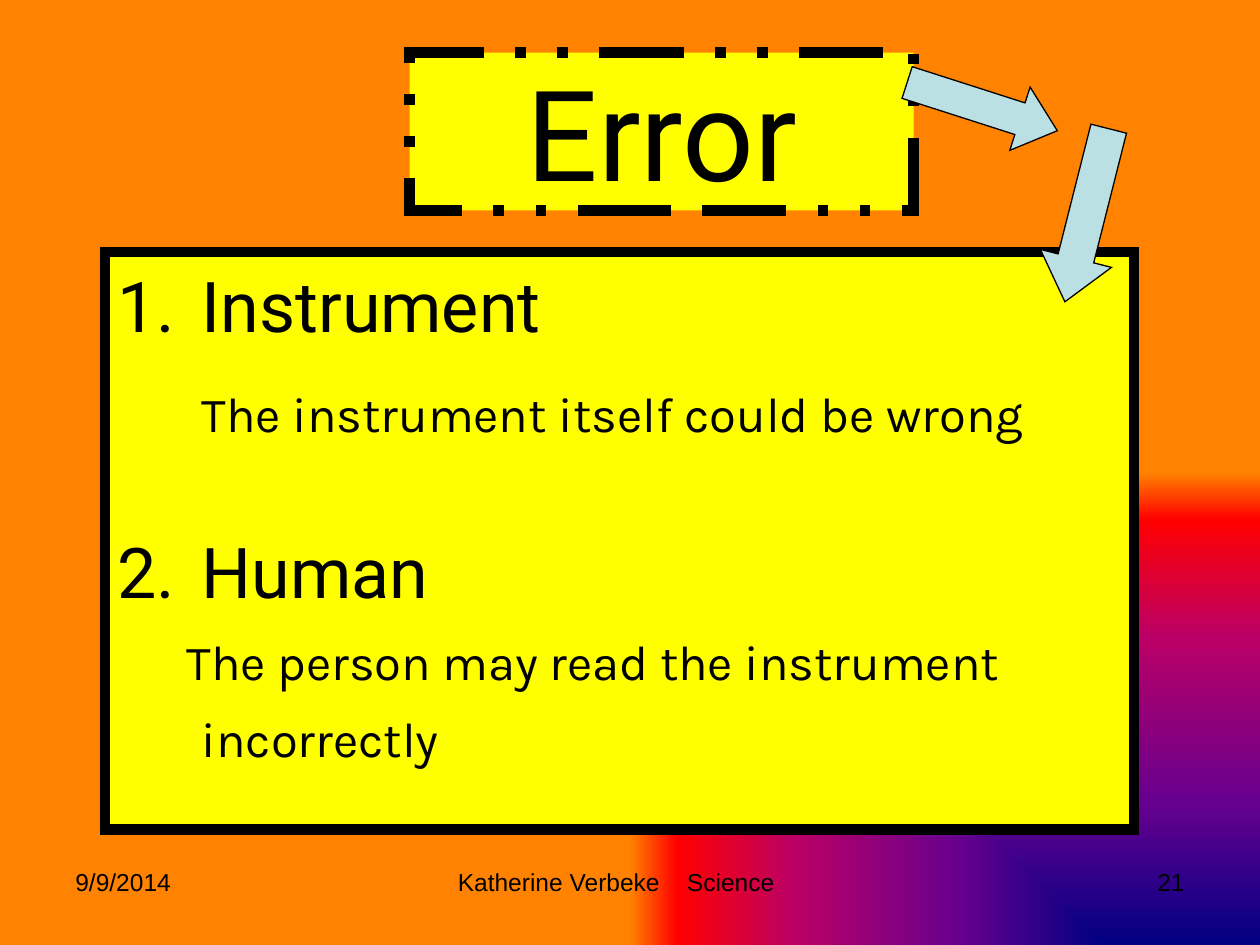
from pptx import Presentation
from pptx.dml.color import RGBColor
from pptx.enum.dml import MSO_LINE
from pptx.enum.shapes import MSO_SHAPE
from pptx.enum.text import MSO_ANCHOR, MSO_AUTO_SIZE, PP_ALIGN
from pptx.oxml import parse_xml
from pptx.oxml.ns import nsdecls, qn
from pptx.util import Cm, Pt
from lxml.etree import SubElement

COLORS = {"ink": "000000", "panel": "FFFF00", "arrow": "BBE0E3"}
BACKGROUND = {0: "000082", 30: "66008F", 65: "BA0066", 90: "FF0000", 100: "FF8200"}
HEADING, DETAIL, FOOTER = ("Roboto", 40), ("Karla", 28), ("Arial", 14)


class SlideBuilder:
    def __init__(self, slide):
        self.slide = slide

    def background(self, stops):
        marks = "".join(
            f'<a:gs pos="{position * 1000}"><a:srgbClr val="{color}"/></a:gs>'
            for position, color in stops.items())
        self.slide.element.cSld.insert(0, parse_xml(
            f'<p:bg {nsdecls("p", "a")}><p:bgPr><a:gradFill rotWithShape="0">'
            f'<a:gsLst>{marks}</a:gsLst><a:path path="rect">'
            '<a:fillToRect l="100000" t="100000"/></a:path></a:gradFill>'
            '<a:effectLst/></p:bgPr></p:bg>'))

    def outline(self, shape, fill, width, dash=None):
        shape.fill.solid()
        shape.fill.fore_color.rgb = RGBColor.from_string(COLORS[fill])
        shape.line.color.rgb = RGBColor.from_string(COLORS["ink"])
        shape.line.width = Pt(width)
        if dash:
            shape.line.dash_style = dash
        line = shape.element.spPr.find(qn("a:ln"))
        SubElement(line, qn("a:miter"), lim="800000")

    def format(self, para, style, align=PP_ALIGN.LEFT):
        para.alignment = align
        for span in para.runs:
            span.font.name, size = style
            span.font.size = Pt(size)
            span.font.color.rgb = RGBColor.from_string(COLORS["ink"])

    def title(self, text, left, top, width, height):
        box = self.slide.shapes.title
        box.left, box.top, box.width, box.height = map(Cm, (left, top, width, height))
        self.outline(box, "panel", 6, MSO_LINE.DASH_DOT_DOT)
        frame = box.text_frame
        frame.text = text
        frame.auto_size = MSO_AUTO_SIZE.NONE
        frame.vertical_anchor = MSO_ANCHOR.MIDDLE
        self.format(frame.paragraphs[0], ("Roboto", 72), PP_ALIGN.CENTER)

    def shape(self, kind, left, top, width, height, fill, line):
        shape = self.slide.shapes.add_shape(kind, *map(Cm, (left, top, width, height)))
        shape.shadow.inherit = False
        self.outline(shape, fill, line)
        return shape

    def arrow(self, kind, left, top, width, height, rotation, head):
        arrow = self.shape(kind, left, top, width, height, "arrow", 0.75)
        arrow.adjustments[1] = head
        arrow.rotation = rotation

    def panel(self, items, left, top, width, height):
        box = self.shape(MSO_SHAPE.RECTANGLE, left, top, width, height, "panel", 6)
        frame = box.text_frame
        frame.word_wrap = True
        frame.vertical_anchor = MSO_ANCHOR.TOP
        frame.margin_top = Cm(0.22)
        frame.text = "\n".join(item[0] for item in items)
        for para, (_, style, number, indent, before, spacing) in zip(frame.paragraphs, items):
            self.format(para, style)
            para.space_before = Pt(before)
            para.line_spacing = spacing
            props = para._p.get_or_add_pPr()
            props.set("marL", str(Cm(1.7)))
            props.set("indent", str(Cm(indent)))
            if number:
                SubElement(props, qn("a:buFont"), typeface="+mj-lt")
                SubElement(props, qn("a:buAutoNum"), type="arabicPeriod", startAt=str(number))

    def footer(self, text, left, width, align, tab=None):
        box = self.slide.shapes.add_textbox(Cm(left), Cm(17.35), Cm(width), Cm(1.32))
        frame = box.text_frame
        frame.word_wrap = True
        frame.text = text
        para = frame.paragraphs[0]
        self.format(para, FOOTER, align)
        if tab:
            stops = SubElement(para._p.get_or_add_pPr(), qn("a:tabLst"))
            SubElement(stops, qn("a:tab"), pos=str(Cm(tab)), algn="l")


def main():
    deck = Presentation()
    deck.slide_width, deck.slide_height = Cm(25.4), Cm(19.05)
    page = SlideBuilder(deck.slides.add_slide(deck.slide_layouts[5]))
    page.background(BACKGROUND)

    # Footer: date, author and subject, page number
    page.footer("9/9/2014", 1.27, 5.92, PP_ALIGN.LEFT)
    page.footer("Katherine Verbeke\tScience", 8.98, 7.75, PP_ALIGN.LEFT, tab=4.62)
    page.footer("21", 18.21, 5.92, PP_ALIGN.RIGHT)

    # Title and the two kinds of error: text, style, number, indent, space, spacing
    page.title("Error", 8.26, 1.06, 10.16, 3.18)
    page.panel([
        ("Instrument", HEADING, 1, -1.7, 0, 1.0),
        ("The instrument itself could be wrong", DETAIL, None, 0, 21, 1.0),
        ("Human", HEADING, 2, -1.7, 49, 1.0),
        ("The person may read the instrument incorrectly", DETAIL, None, -0.3, 0, 1.32),
    ], 2.12, 5.08, 20.74, 11.64)

    # Arrows from the title to the list
    page.arrow(MSO_SHAPE.RIGHT_ARROW, 18.21, 1.48, 3.18, 1.34, 17.8, 0.59)
    page.arrow(MSO_SHAPE.DOWN_ARROW, 21.17, 2.54, 1.48, 3.6, 14.2, 0.61)

    deck.save("out.pptx")


if __name__ == "__main__":
    main()
